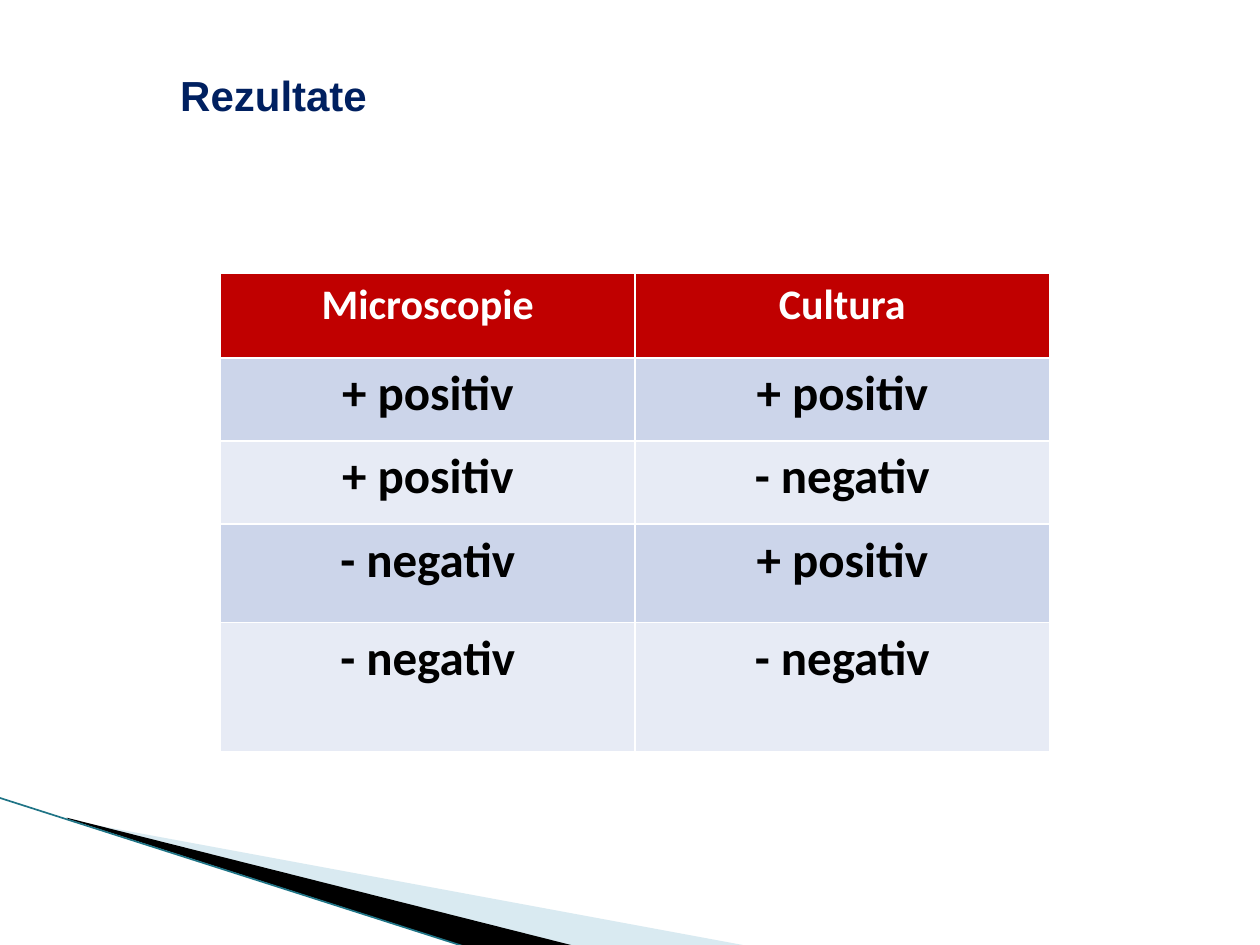
from lxml import etree
from pptx import Presentation
from pptx.dml.color import RGBColor
from pptx.enum.shapes import MSO_CONNECTOR
from pptx.enum.text import MSO_ANCHOR, MSO_AUTO_SIZE, PP_ALIGN
from pptx.oxml.ns import qn
from pptx.util import Inches, Pt

COLORS = {
    "title": "002060",
    "header": "C00000",
    "header_text": "FFFFFF",
    "odd_row": "CCD5EA",
    "even_row": "E7EBF5",
    "text": "000000",
    "pale_wedge": "A0CBDC",
    "dark_wedge": "000000",
    "edge": "1F7486",
}


def color(name):
    return RGBColor.from_string(COLORS[name])


def style_text(para, font_name, size, color_name):
    for span in para.runs:
        span.font.name = font_name
        span.font.size = Pt(size)
        span.font.bold = True
        span.font.color.rgb = color(color_name)


deck = Presentation()
deck.slide_width, deck.slide_height = Inches(10), Inches(7.5)
page = deck.slides.add_slide(deck.slide_layouts[5])

# Corner decoration
wedges = [
    ("pale_wedge", [(0.55, 6.51), (5.95, 7.51), (4.56, 7.51), (0.55, 6.5)]),
    ("dark_wedge", [(0.53, 6.49), (4.57, 7.51), (3.72, 7.52), (0.54, 6.5)]),
]
for name, points in wedges:
    corners = [(Inches(x), Inches(y)) for x, y in points]
    builder = page.shapes.build_freeform(*corners[0])
    builder.add_line_segments(corners[1:])
    wedge = builder.convert_to_shape()
    wedge.shadow.inherit = False
    wedge.fill.solid()
    wedge.fill.fore_color.rgb = color(name)
    wedge.line.fill.background()
    if name == "pale_wedge":
        fill_color = wedge.fill._xPr.find(qn("a:solidFill"))[0]
        etree.SubElement(fill_color, qn("a:alpha"), val="40000")

edge = page.shapes.add_connector(
    MSO_CONNECTOR.STRAIGHT, Inches(-0.01), Inches(6.33), Inches(3.71), Inches(7.52))
edge.line.color.rgb = color("edge")
edge.line.width = Pt(0.95)
etree.SubElement(edge._element.spPr, qn("a:effectLst"))

# Results table
rows = [
    ("Microscopie", "Cultura"),
    ("+ positiv", "+ positiv"),
    ("+ positiv", "- negativ"),
    ("- negativ", "+ positiv"),
    ("- negativ", "- negativ"),
]
row_heights = [0.67, 0.66, 0.66, 0.78, 1.03]
table = page.shapes.add_table(
    len(rows), 2, Inches(1.75), Inches(2.17), Inches(6.58), Inches(3.8)).table
for row_index, (labels, height) in enumerate(zip(rows, row_heights)):
    table.rows[row_index].height = Inches(height)
    if row_index == 0:
        fill_name, text_name, size = "header", "header_text", 24
    else:
        fill_name = "odd_row" if row_index % 2 else "even_row"
        text_name, size = "text", 28
    for column_index, label in enumerate(labels):
        cell = table.cell(row_index, column_index)
        cell.fill.solid()
        cell.fill.fore_color.rgb = color(fill_name)
        cell.text_frame.text = label
        para = cell.text_frame.paragraphs[0]
        para.alignment = PP_ALIGN.CENTER
        style_text(para, "Calibri", size, text_name)

# Title
title = page.shapes.title
title.left, title.top = Inches(1.33), Inches(0.5)
title.width, title.height = Inches(1.7), Inches(0.5)
frame = title.text_frame
frame.text = "Rezultate"
frame.word_wrap = False
frame.auto_size = MSO_AUTO_SIZE.SHAPE_TO_FIT_TEXT
frame.vertical_anchor = MSO_ANCHOR.TOP
frame.paragraphs[0].alignment = PP_ALIGN.LEFT
style_text(frame.paragraphs[0], "Arial", 24, "title")

deck.save("out.pptx")
